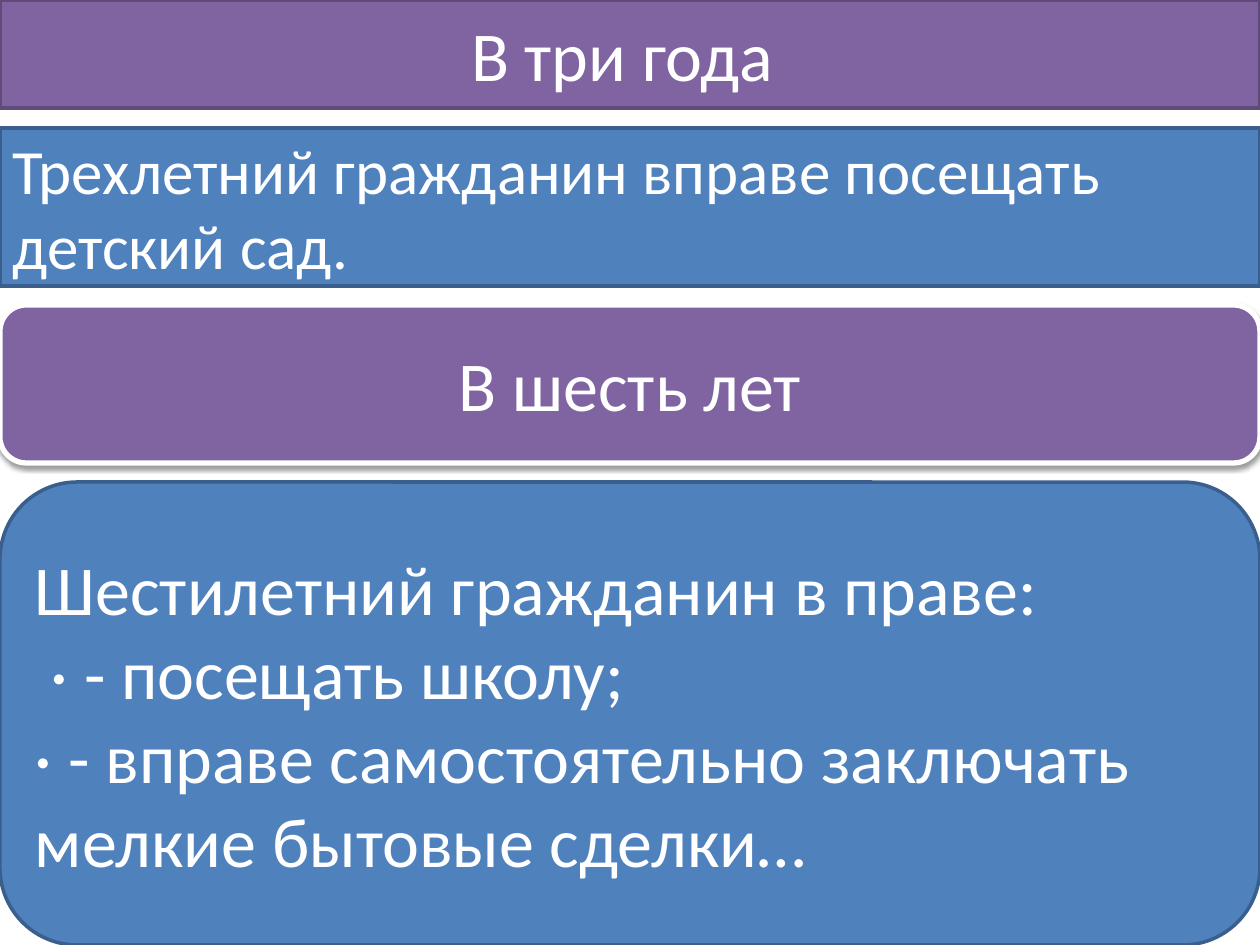
from lxml.etree import SubElement
from pptx import Presentation
from pptx.dml.color import RGBColor
from pptx.enum.shapes import MSO_SHAPE
from pptx.enum.text import MSO_ANCHOR, MSO_AUTO_SIZE, PP_ALIGN
from pptx.oxml.ns import qn
from pptx.util import Emu, Pt

PX_PER_INCH = 126
WIDTH, HEIGHT = 1260, 945
PURPLE = RGBColor(0x80, 0x64, 0xA2)
DARK_PURPLE = RGBColor(0x5F, 0x4A, 0x78)
BLUE = RGBColor(0x4F, 0x81, 0xBD)
DARK_BLUE = RGBColor(0x3A, 0x5F, 0x8C)
WHITE = RGBColor(0xFF, 0xFF, 0xFF)


def px(n):
    return Emu(round(n * 914400 / PX_PER_INCH))


def style_band(sp, top, height, fill, line, line_width=2):
    sp.left, sp.top, sp.width, sp.height = px(0), px(top), px(WIDTH), px(height)
    sp.fill.solid()
    sp.fill.fore_color.rgb = fill
    sp.line.color.rgb = line
    sp.line.width = Pt(line_width)
    sp.shadow.inherit = False


def add_rounded_band(s, top, height, fill, line, line_width=2):
    sp = s.shapes.add_shape(MSO_SHAPE.ROUNDED_RECTANGLE, 0, 0, px(WIDTH), px(height))
    style_band(sp, top, height, fill, line, line_width)
    return sp


def add_soft_shadow(sp):
    effects = sp._element.spPr.find(qn("a:effectLst"))
    shadow = SubElement(effects, qn("a:outerShdw"), blurRad="40000", dist="20000",
                        dir="5400000", rotWithShape="0")
    color = SubElement(shadow, qn("a:srgbClr"), val="000000")
    SubElement(color, qn("a:alpha"), val="38000")


def set_text(sp, *lines, size=40, align=PP_ALIGN.LEFT, color=WHITE, font="Calibri"):
    tf = sp.text_frame
    tf.word_wrap = True
    tf.auto_size = MSO_AUTO_SIZE.NONE
    tf.vertical_anchor = MSO_ANCHOR.MIDDLE
    for i, line in enumerate(lines):
        p = tf.add_paragraph() if i else tf.paragraphs[0]
        p.alignment = align
        p.space_before = Pt(0)
        r = p.add_run()
        r.text = line
        r.font.size = Pt(size)
        r.font.name = font
        r.font.color.rgb = color


def remove_bullets(sp):
    for p in sp.text_frame.paragraphs:
        pPr = p._p.get_or_add_pPr()
        pPr.set("marL", "0")
        pPr.set("indent", "0")
        SubElement(pPr, qn("a:buNone"))


def main():
    prs = Presentation()
    prs.slide_width, prs.slide_height = px(WIDTH), px(HEIGHT)
    s = prs.slides.add_slide(prs.slide_layouts[1])

    title = s.shapes.title
    style_band(title, 0, 108, PURPLE, DARK_PURPLE)
    set_text(title, "В три года ", align=PP_ALIGN.CENTER)

    body = s.placeholders[1]
    style_band(body, 128, 158, BLUE, DARK_BLUE)
    set_text(body, "Трехлетний гражданин вправе посещать детский сад.", size=36)
    remove_bullets(body)

    six_years = add_rounded_band(s, 305, 158, PURPLE, WHITE, line_width=3)
    add_soft_shadow(six_years)
    set_text(six_years, "В шесть лет", align=PP_ALIGN.CENTER)

    rights = add_rounded_band(s, 482, 463, BLUE, DARK_BLUE)
    set_text(rights, "Шестилетний гражданин в праве:",
             " · - посещать школу;",
             "· - вправе самостоятельно заключать мелкие бытовые сделки…")

    prs.save("out.pptx")


if __name__ == "__main__":
    main()
